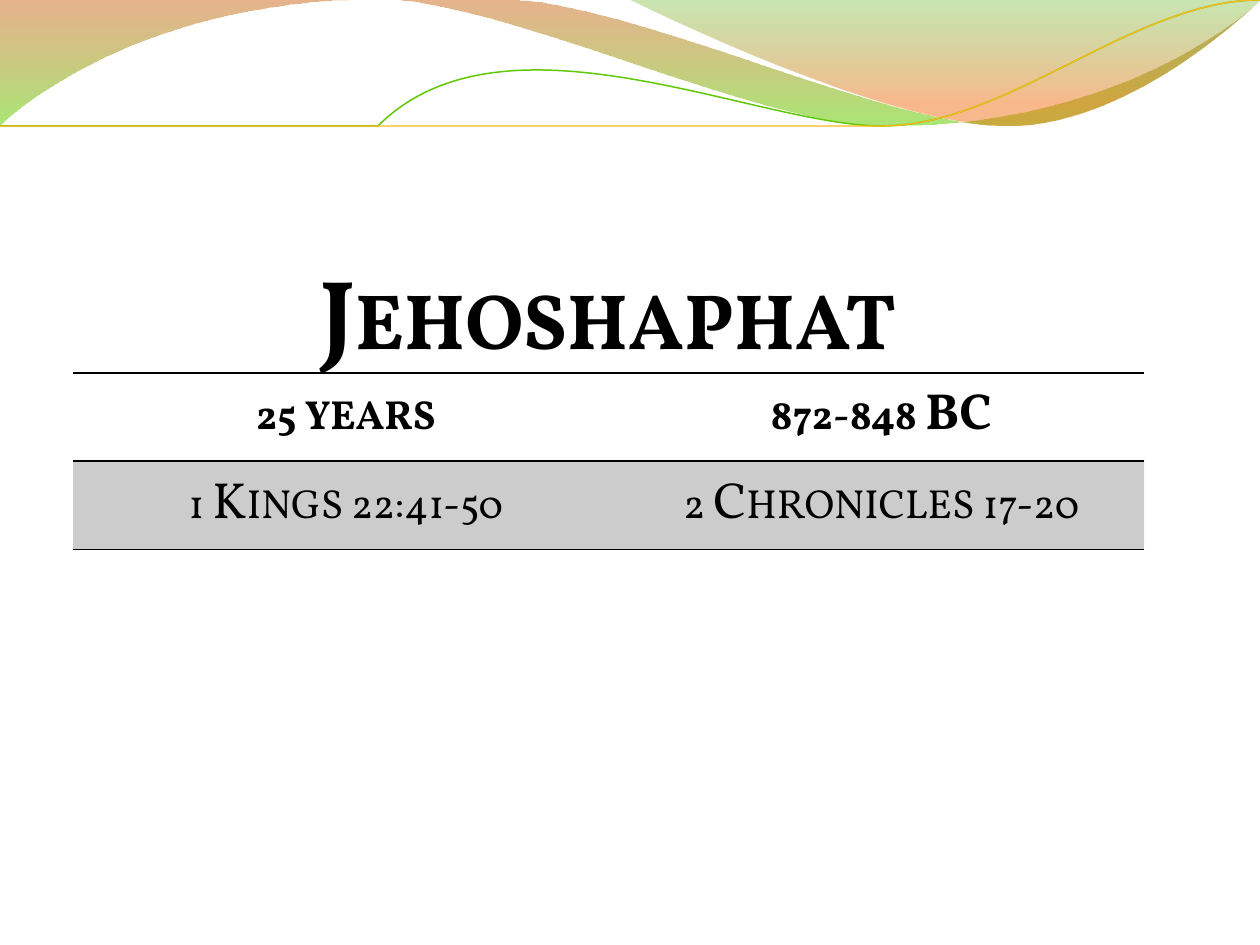
"""Build the Jehoshaphat slide: wave banner, title and a table of reign and sources."""
import pptx
import pptx.util
import pptx.dml.color
import pptx.enum.text
import pptx.oxml
import pptx.oxml.ns

COLORS = {"ink": "000000", "rust": "C95600", "lime": "63D200", "green": "50AB00",
          "orange": "F06700", "leaf": "60C804", "gold": "FFB91D"}
FONT = "Vollkorn"
qn = pptx.oxml.ns.qn
inch = pptx.util.Inches


def add_curve(shapes, start, segments):
    points = [start]
    for seg in segments:
        points += zip(seg[::2], seg[1::2])
    builder = shapes.build_freeform(*points[0], scale=inch(1))
    builder.add_line_segments(points[1:], close=False)
    sp = builder.convert_to_shape()
    sp.shadow.inherit = False
    nodes = iter(list(sp._element.iter(qn("a:lnTo"))))
    for seg in segments:
        group = [next(nodes) for _ in seg[::2]]
        if len(group) == 3:
            curve = pptx.oxml.parse_xml(f"<a:cubicBezTo {pptx.oxml.ns.nsdecls('a')}/>")
            group[0].addprevious(curve)
            for node in group:
                curve.append(node[0])
                node.getparent().remove(node)
    return sp


def style_text(tf, size, bold):
    tf.vertical_anchor = tf.vertical_anchor or pptx.enum.text.MSO_ANCHOR.MIDDLE
    p = tf.paragraphs[0]
    p.alignment = pptx.enum.text.PP_ALIGN.CENTER
    r = p.runs[0]
    r.font.name, r.font.size, r.font.bold = FONT, pptx.util.Pt(size), bold
    r.font.color.rgb = pptx.dml.color.RGBColor.from_string(COLORS["ink"])
    r.font._element.set("cap", "small")


prs = pptx.Presentation()
prs.slide_width, prs.slide_height = inch(10), inch(7.5)
s = prs.slides.add_slide(prs.slide_layouts[6])

bands = [
    ((0, 0), [(4.4, -0.01), (4.76, 0.17, 6.64, 0.63, 7.58, 0.63),
              (8.53, 0.63, 9.58, 0.26, 10, 0.09), (10.01, 0.36),
              (9.83, 0.44, 8.7, 0.76, 7.46, 0.75), (6.22, 0.75, 3.82, 0.28, 2.57, 0.34),
              (1.29, 0.36, 0.46, 0.83, -0.01, 1.13), (0, 0)],
     [(0, "rust", 45), (1, "lime", 55)]),
    ((4.79, -0.01), [(5.09, 0.11, 6.82, 0.62, 7.69, 0.65),
                     (8.56, 0.69, 9.61, 0.32, 10, 0.21), (10, 0), (4.79, -0.01)],
     [(0, "green", 30), (0.8, "orange", 45)]),
]
for start, segments, stops in bands:
    sp = add_curve(s.shapes, start, segments)
    sp.line.fill.background()
    sp.fill.gradient()
    sp.fill.gradient_angle = 270
    for stop, (position, color, opacity) in zip(sp.fill.gradient_stops, stops):
        stop.position = position
        stop.color.rgb = pptx.dml.color.RGBColor.from_string(COLORS[color])
        clr = stop._gs.find(qn("a:srgbClr"))
        pptx.oxml.ns and clr.append(pptx.oxml.parse_xml(
            f'<a:alpha {pptx.oxml.ns.nsdecls("a")} val="{opacity * 1000}"/>'))

waves = [
    ((0, 1.11), [(0.48, 0.93, 1.58, 0.57, 2.77, 0.52), (3.95, 0.47, 5.93, 0.89, 7.13, 0.8),
                 (8.33, 0.71, 9.38, 0.15, 9.98, -0.02)], "leaf", 0.85),
    ((0, 1.04), [(0.47, 0.96, 1.64, 0.61, 2.83, 0.56), (4.03, 0.51, 5.97, 0.84, 7.17, 0.75),
                 (8.36, 0.67, 9.41, 0.21, 10, 0.06)], "gold", 0.75),
]
for start, segments, color, width in waves:
    sp = add_curve(s.shapes, start, segments)
    sp.fill.background()
    sp.line.color.rgb = pptx.dml.color.RGBColor.from_string(COLORS[color])
    sp.line.width = pptx.util.Pt(width)

left, width = inch(0.58), inch(8.5)
title = s.shapes.add_textbox(left, inch(1.44), width, inch(1.49))
tf = title.text_frame
tf.text = "Jehoshaphat"
tf.word_wrap = True
tf.margin_left = tf.margin_right = tf.margin_top = tf.margin_bottom = 0
tf.vertical_anchor = pptx.enum.text.MSO_ANCHOR.BOTTOM
style_text(tf, 56, True)

rows = [("25 years", "872-848 BC"), ("1 Kings 22:41-50", "2 Chronicles 17-20")]
table = s.shapes.add_table(2, 2, left, inch(2.96), width, inch(1.4)).table
table.horz_banding = False
table.columns[0].width, table.columns[1].width = inch(4.33), inch(4.17)
for row, texts in enumerate(rows):
    for col, text in enumerate(texts):
        cell = table.cell(row, col)
        cell.text_frame.text = text
        cell.vertical_anchor = pptx.enum.text.MSO_ANCHOR.MIDDLE
        style_text(cell.text_frame, 29, row == 0)
        cell.vertical_anchor = pptx.enum.text.MSO_ANCHOR.MIDDLE
        tcPr = cell._tc.get_or_add_tcPr()
        if row == 0:
            cell.fill.background()
        else:
            cell.fill.solid()
            cell.fill.fore_color.rgb = pptx.dml.color.RGBColor.from_string(COLORS["ink"])
            tcPr.find(".//" + qn("a:srgbClr")).append(pptx.oxml.parse_xml(
                f'<a:alpha {pptx.oxml.ns.nsdecls("a")} val="20000"/>'))
        for i, side in enumerate("LRTB"):
            paint = ("<a:noFill/>" if side in "LR" else
                     f'<a:solidFill><a:srgbClr val="{COLORS["ink"]}"/></a:solidFill>')
            tcPr.insert(i, pptx.oxml.parse_xml(
                f'<a:ln{side} {pptx.oxml.ns.nsdecls("a")} w="12700">{paint}</a:ln{side}>'))

prs.save("out.pptx")
